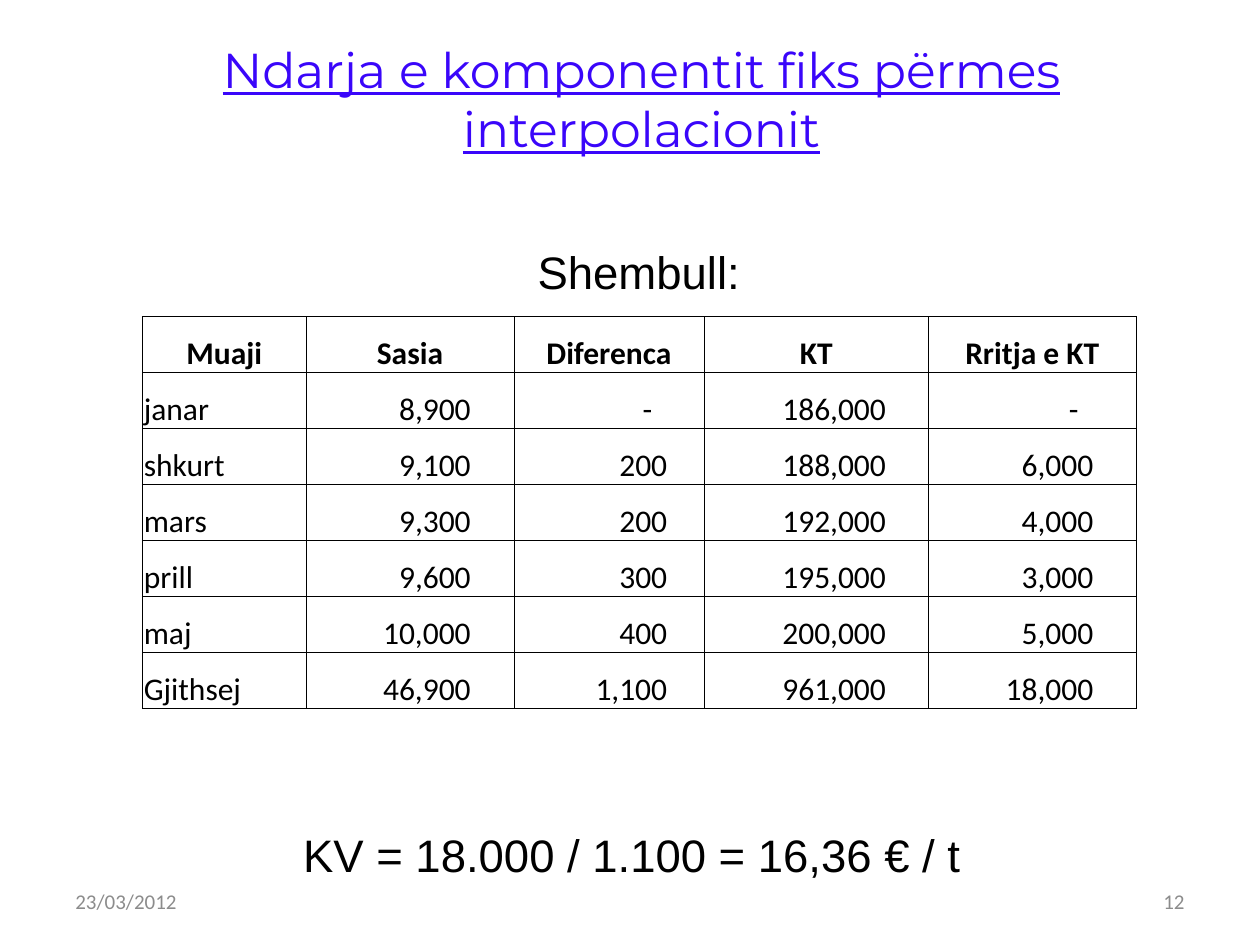
"""Build the slide on splitting off the fixed cost by interpolation."""
from pptx import Presentation
from pptx.dml.color import RGBColor
from pptx.enum.text import MSO_ANCHOR as Anchor, MSO_AUTO_SIZE as Fit, PP_ALIGN as Align
from pptx.oxml import parse_xml
from pptx.oxml.ns import nsdecls
from pptx.util import Cm, Pt

BLACK = RGBColor(0x00, 0x00, 0x00)
GREY = RGBColor(0x8C, 0x8C, 0x8C)
BLUE = RGBColor(0x3A, 0x06, 0xFA)

HEAD = ["Muaji", "Sasia", "Diferenca", "KT", "Rritja e KT"]
ROWS = [
    ["janar", "8,900", "-", "186,000", "-"],
    ["shkurt", "9,100", "200", "188,000", "6,000"],
    ["mars", "9,300", "200", "192,000", "4,000"],
    ["prill", "9,600", "300", "195,000", "3,000"],
    ["maj", "10,000", "400", "200,000", "5,000"],
    ["Gjithsej", "46,900", "1,100", "961,000", "18,000"],
]
WIDTHS = [3.3, 4.19, 3.83, 4.53, 4.18]
PADS = [0.03, 0.87, 0.74, 0.86, 0.86]
ROW_H = 1.13
EDGE = 0.03
DASH_PAD = 0.3


def write(frame, text, font, size, color, align):
    """Add one run to the first paragraph and return both."""
    para = frame.paragraphs[0]
    para.alignment = align
    run = para.add_run()
    run.text = text
    run.font.name = font
    run.font.size = Pt(size)
    run.font.color.rgb = color
    return para, run


def add_box(left, top, width, height, anchor):
    """Add a wrapping text box and return its frame."""
    frame = slide.shapes.add_textbox(Cm(left), Cm(top), Cm(width), Cm(height)).text_frame
    frame.word_wrap = True
    frame.vertical_anchor = anchor
    return frame


deck = Presentation()
deck.slide_width, deck.slide_height = Cm(25.4), Cm(19.05)
slide = deck.slides.add_slide(deck.slide_layouts[5])

title = slide.shapes.title
title.left, title.top, title.width, title.height = Cm(2.21), Cm(2.03), Cm(21.44), Cm(1.27)
title.text_frame.auto_size = Fit.NONE
title.text_frame.word_wrap = True
title.text_frame.vertical_anchor = Anchor.BOTTOM
para, run = write(title.text_frame, "Ndarja e komponentit fiks përmes interpolacionit",
                  "Montserrat", 28, BLUE, Align.CENTER)
run.font.underline = True

for text, left, top, height, anchor in [
    ("Shembull:", 1.6, 4.93, 1.24, Anchor.TOP),
    ("KV = 18.000 / 1.100 = 16,36 € / t", 1.47, 15.09, 2.82, Anchor.BOTTOM),
]:
    frame = add_box(left, top, 22.56, height, anchor)
    para, run = write(frame, text, "Arial", 26, BLACK, Align.CENTER)
    para.line_spacing = 0.9

grid = slide.shapes.add_table(len(ROWS) + 1, len(HEAD), Cm(2.87), Cm(6.38),
                              Cm(sum(WIDTHS)), Cm(ROW_H * (len(ROWS) + 1))).table
for col, width in zip(grid.columns, WIDTHS):
    col.width = Cm(width)
for r, row in enumerate([HEAD] + ROWS):
    grid.rows[r].height = Cm(ROW_H)
    for c, text in enumerate(row):
        cell = grid.cell(r, c)
        cell.vertical_anchor = Anchor.BOTTOM
        cell.margin_left = cell.margin_top = cell.margin_right = Cm(EDGE)
        cell.margin_bottom = 0
        align = Align.CENTER if r == 0 else Align.LEFT
        if r and c:
            align = Align.RIGHT
            cell.margin_right = Cm(PADS[c] + (DASH_PAD if text == "-" else 0))
        para, run = write(cell.text_frame, text, "Calibri", 18, BLACK, align)
        run.font.bold = r == 0
        props = cell._tc.get_or_add_tcPr()
        for side in "LRTB":
            props.append(parse_xml(
                f'<a:ln{side} {nsdecls("a")} w="{Pt(0.5)}"><a:solidFill>'
                f'<a:srgbClr val="{BLACK}"/></a:solidFill></a:ln{side}>'))
        cell.fill.background()

for text, left, align in [("23/03/2012", 1.27, Align.LEFT), ("12", 18.21, Align.RIGHT)]:
    frame = add_box(left, 17.65, 5.92, 1.02, Anchor.MIDDLE)
    frame.auto_size = Fit.NONE
    write(frame, text, "Calibri", 12, GREY, align)

deck.save("out.pptx")
